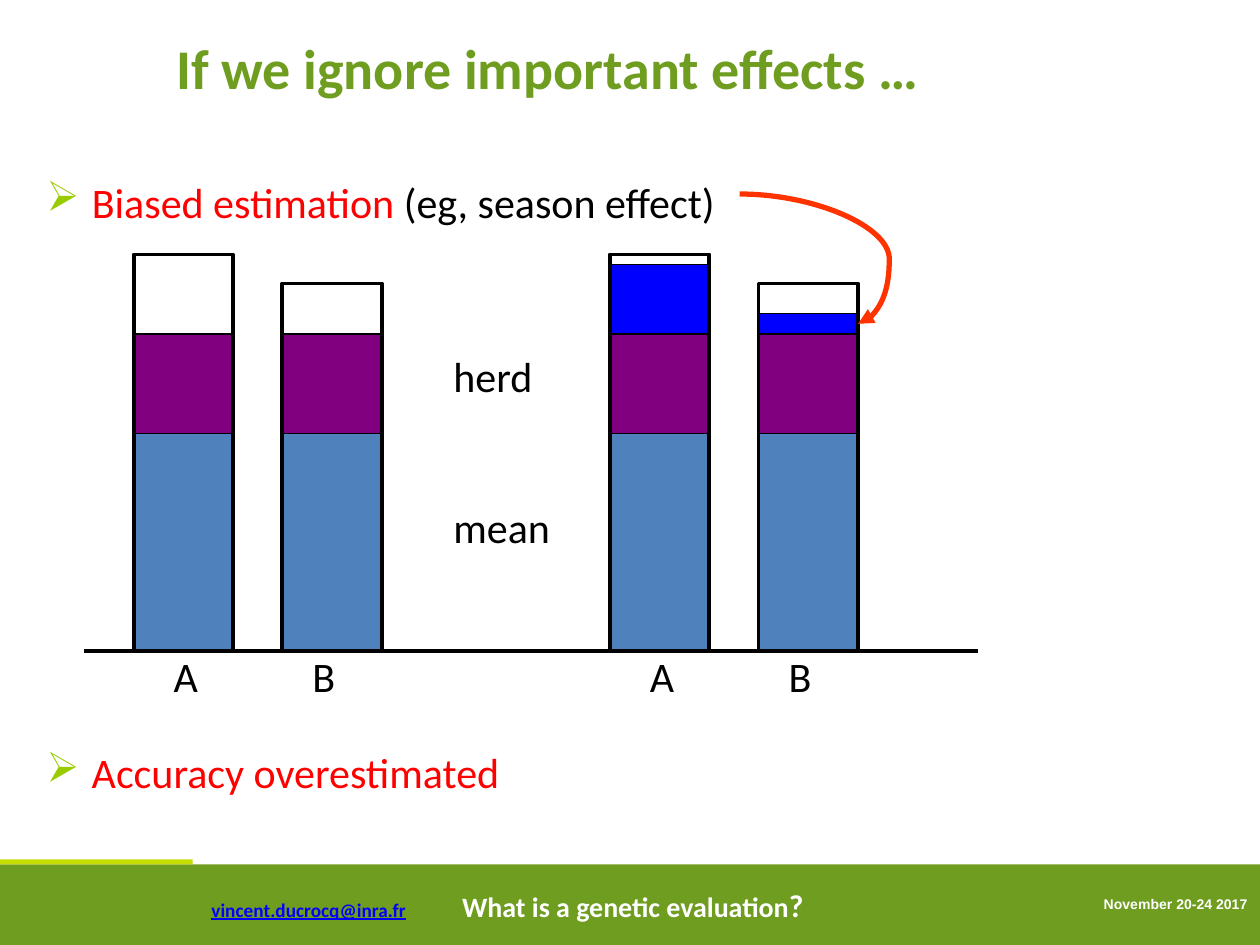
"""Build the slide on the bias caused by ignoring important effects."""
from lxml import etree
from pptx import Presentation, util as u
from pptx.dml.color import RGBColor
from pptx.enum import shapes, text
from pptx.oxml import ns

COLOURS = {
    "green": "6F9D20", "lime": "C5DD01", "bullet": "99CC00", "white": "FFFFFF",
    "black": "000000", "red": "FF0000", "link": "0000FF", "arrow": "FF3300",
    "mean": "4F81BD", "herd": "800080", "season": "0000FF",
}
BASELINE = 5.17
BAR_WIDTH = 0.79
BAR_GAP = 1.18
MEAN_HEIGHT = 1.73
HERD_HEIGHT = 0.79
BAR_TOTALS = (3.15, 2.92)


def colour(name):
    return RGBColor.from_string(COLOURS[name])


def add_element(parent, tag, **attributes):
    return etree.SubElement(parent, ns.qn(tag), attributes)


def add_rectangle(slide, left, top, width, height, fill=None, line_width=None):
    shape = slide.shapes.add_shape(
        shapes.MSO_SHAPE.RECTANGLE, *map(u.Inches, (left, top, width, height)))
    shape.shadow.inherit = False
    if fill:
        shape.fill.solid()
        shape.fill.fore_color.rgb = colour(fill)
    else:
        shape.fill.background()
    if line_width:
        shape.line.color.rgb = colour("black")
        shape.line.width = u.Pt(line_width)
    else:
        shape.line.fill.background()


def add_text(slide, left, top, width, height, runs, size=24, font="Calibri",
             bold=False, align=text.PP_ALIGN.LEFT, bullet=None, tab=None):
    """Add one paragraph; runs are (text, colour) or (text, colour, size, underline)."""
    box = slide.shapes.add_textbox(*map(u.Inches, (left, top, width, height)))
    frame = box.text_frame
    frame.word_wrap = True
    paragraph = frame.paragraphs[0]
    paragraph.alignment = align
    properties = paragraph._p.get_or_add_pPr()
    if bullet:
        paragraph.line_spacing = 1.3
        indent = u.Inches(0.36)
        properties.set("marL", str(indent))
        properties.set("indent", str(-indent))
        bullet_colour = add_element(properties, "a:buClr")
        add_element(bullet_colour, "a:srgbClr", val=COLOURS["bullet"])
        add_element(properties, "a:buChar", char=bullet)
    if tab:
        tabs = add_element(properties, "a:tabLst")
        add_element(tabs, "a:tab", pos=str(u.Inches(tab)), algn="l")
    for content, run_colour, *extra in runs:
        run = paragraph.add_run()
        run.text = content
        run.font.name = font
        run.font.bold = bold
        run.font.color.rgb = colour(run_colour)
        run.font.size = u.Pt(extra[0] if extra else size)
        run.font.underline = len(extra) > 1 and extra[1]


def add_line(slide, kind, start, end, line_colour, width):
    connector = slide.shapes.add_connector(kind, *map(u.Inches, start + end))
    connector.line.color.rgb = colour(line_colour)
    connector.line.width = u.Pt(width)
    add_element(connector._element.spPr, "a:effectLst")
    return connector


def add_curved_arrow(slide, start, end, bend):
    connector = add_line(slide, shapes.MSO_CONNECTOR.CURVE, start, end, "arrow", 3)
    add_element(connector.line._get_or_add_ln(), "a:tailEnd", type="triangle")
    geometry = connector._element.spPr.find(ns.qn("a:prstGeom"))
    guides = geometry.find(ns.qn("a:avLst"))
    if guides is None:
        guides = add_element(geometry, "a:avLst")
    add_element(guides, "a:gd", name="adj1", fmla=f"val {round(bend * 100000)}")


def add_bar(slide, left, total, season):
    top = BASELINE
    for part, height, line_width in (("mean", MEAN_HEIGHT, None),
                                     ("herd", HERD_HEIGHT, 0.75),
                                     ("season", season, 0.75)):
        if height:
            top -= height
            add_rectangle(slide, left, top, BAR_WIDTH, height, part, line_width)
    add_rectangle(slide, left, BASELINE - total, BAR_WIDTH, total, line_width=2.25)


def add_bar_pair(slide, left, seasons):
    for index, (total, season) in enumerate(zip(BAR_TOTALS, seasons)):
        add_bar(slide, left + index * BAR_GAP, total, season)
    add_text(slide, left + 0.22, 5.11, 1.48, 0.5, [("A\tB", "black")], tab=1.1)


def add_footer(slide):
    add_rectangle(slide, 0, 6.86, 10, 0.64, "green")
    add_rectangle(slide, 0, 6.82, 1.53, 0.04, "lime")
    add_text(slide, 1.58, 6.98, 6.3, 0.4,
             [("vincent.ducrocq@inra.fr", "link", 11, True),
              ("\tWhat is a genetic evaluation", "white", 16),
              ("?", "white", 18)], bold=True, tab=1.99)
    add_text(slide, 7.92, 7.06, 2.08, 0.23, [("November 20-24 2017", "white")],
             size=8, font="Arial", bold=True, align=text.PP_ALIGN.RIGHT)


def main():
    presentation = Presentation()
    presentation.slide_width = u.Inches(10)
    presentation.slide_height = u.Inches(7.5)
    slide = presentation.slides.add_slide(presentation.slide_layouts[6])

    add_footer(slide)
    add_text(slide, 1.3, 0.22, 8.7, 0.87,
             [("If we ignore important effects …", "green")], size=32, bold=True)
    add_text(slide, 0.27, 1.23, 5.59, 0.63,
             [("Biased estimation ", "red"), ("(eg, season effect)", "black")],
             bullet="➢")
    add_bar_pair(slide, 1.06, (0, 0))
    add_bar_pair(slide, 4.84, (0.55, 0.16))
    add_line(slide, shapes.MSO_CONNECTOR.STRAIGHT,
             (0.67, BASELINE), (7.76, BASELINE), "black", 2.25)
    for label, top in (("herd", 2.73), ("mean", 3.93)):
        add_text(slide, 3.5, top, 0.98, 0.5, [(label, "black")])
    add_text(slide, 0.27, 5.76, 9.73, 0.63,
             [("Accuracy overestimated", "red")], bullet="➢")
    add_curved_arrow(slide, (5.87, 1.54), (6.81, 2.57), 1.264)
    presentation.save("out.pptx")


if __name__ == "__main__":
    main()
